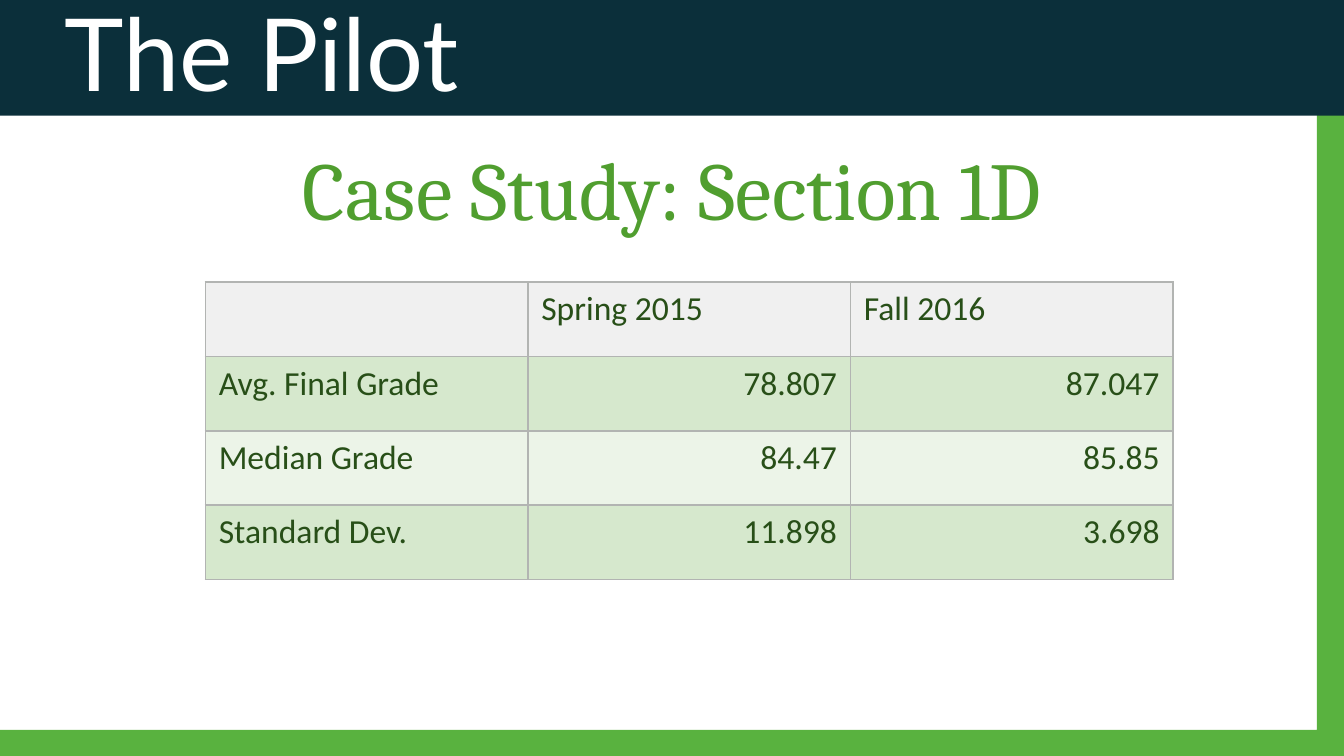
from lxml.etree import SubElement
from pptx import Presentation
from pptx.dml.color import RGBColor
from pptx.enum.shapes import MSO_SHAPE
from pptx.enum.text import MSO_ANCHOR, PP_ALIGN
from pptx.oxml.ns import qn
from pptx.util import Pt

WHITE = RGBColor(0xFF, 0xFF, 0xFF)
NAVY = RGBColor(0x0B, 0x2F, 0x3A)
FRAME_GREEN = RGBColor(0x59, 0xB2, 0x3F)
HEADING_GREEN = RGBColor(0x50, 0x9E, 0x2F)
TEXT_GREEN = RGBColor(0x28, 0x4F, 0x18)
HEADER_GRAY = RGBColor(0xF0, 0xF0, 0xF0)
BAND_DARK = RGBColor(0xD6, 0xE8, 0xCD)
BAND_LIGHT = RGBColor(0xEC, 0xF4, 0xE8)
BORDER_GRAY = RGBColor(0xB2, 0xB4, 0xB2)


def write(paragraph, text, alignment, font):
    paragraph.alignment = alignment
    span = paragraph.add_run()
    span.text = text
    span.font.color.rgb = font["color"]
    for name in ("name", "size"):
        setattr(span.font, name, font[name])


def add_borders(cell, color, width):
    properties = cell._tc.get_or_add_tcPr()
    for position, side in enumerate(("lnL", "lnR", "lnT", "lnB")):
        line = SubElement(properties, qn(f"a:{side}"), w=str(width))
        fill = SubElement(line, qn("a:solidFill"))
        SubElement(fill, qn("a:srgbClr"), val=str(color))
        # Borders come before the cell fill
        properties.insert(position, line)


deck = Presentation()
deck.slide_width, deck.slide_height = Pt(720), Pt(405)
page = deck.slides.add_slide(deck.slide_layouts[6])

# Green frame on the right and bottom, then the title band
frame = page.shapes.add_shape(MSO_SHAPE.CORNER, 0, 0, Pt(720.5), Pt(405.2))
frame.adjustments[0], frame.adjustments[1] = 0.035, 0.037
frame.element.spPr.xfrm.set("flipH", "1")
band = page.shapes.add_shape(MSO_SHAPE.RECTANGLE, 0, Pt(-2), Pt(720.5), Pt(64))
for shape, color in ((frame, FRAME_GREEN), (band, NAVY)):
    shape.shadow.inherit = False
    shape.fill.solid()
    shape.fill.fore_color.rgb = color
    shape.line.fill.background()

# Title and heading
headings = [
    ("The Pilot", (27.4, -8.6, 659, 62.6), PP_ALIGN.LEFT,
     {"name": "Lato", "size": Pt(54), "color": WHITE}),
    ("Case Study: Section 1D", (36, 70.6, 648, 90), PP_ALIGN.CENTER,
     {"name": "Cambria", "size": Pt(44), "color": HEADING_GREEN}),
]
for text, place, alignment, font in headings:
    box = page.shapes.add_textbox(*(Pt(length) for length in place))
    box.text_frame.word_wrap = True
    box.text_frame.vertical_anchor = MSO_ANCHOR.TOP
    write(box.text_frame.paragraphs[0], text, alignment, font)

# Grade table
grades = [
    ("", "Spring 2015", "Fall 2016"),
    ("Avg. Final Grade", "78.807", "87.047"),
    ("Median Grade", "84.47", "85.85"),
    ("Standard Dev.", "11.898", "3.698"),
]
row_fills = [HEADER_GRAY, BAND_DARK, BAND_LIGHT, BAND_DARK]
cell_font = {"name": "Calibri", "size": Pt(18), "color": TEXT_GREEN}
table = page.shapes.add_table(4, 3, Pt(110), Pt(151), Pt(518.4), Pt(159.6)).table
for column in table.columns:
    column.width = Pt(172.8)
for row_index, (row, values) in enumerate(zip(table.rows, grades)):
    row.height = Pt(39.9)
    for column_index, (cell, value) in enumerate(zip(row.cells, values)):
        cell.fill.solid()
        cell.fill.fore_color.rgb = row_fills[row_index]
        add_borders(cell, BORDER_GRAY, Pt(1))
        if value:
            is_number = row_index > 0 and column_index > 0
            alignment = PP_ALIGN.RIGHT if is_number else PP_ALIGN.LEFT
            write(cell.text_frame.paragraphs[0], value, alignment, cell_font)

deck.save("out.pptx")
